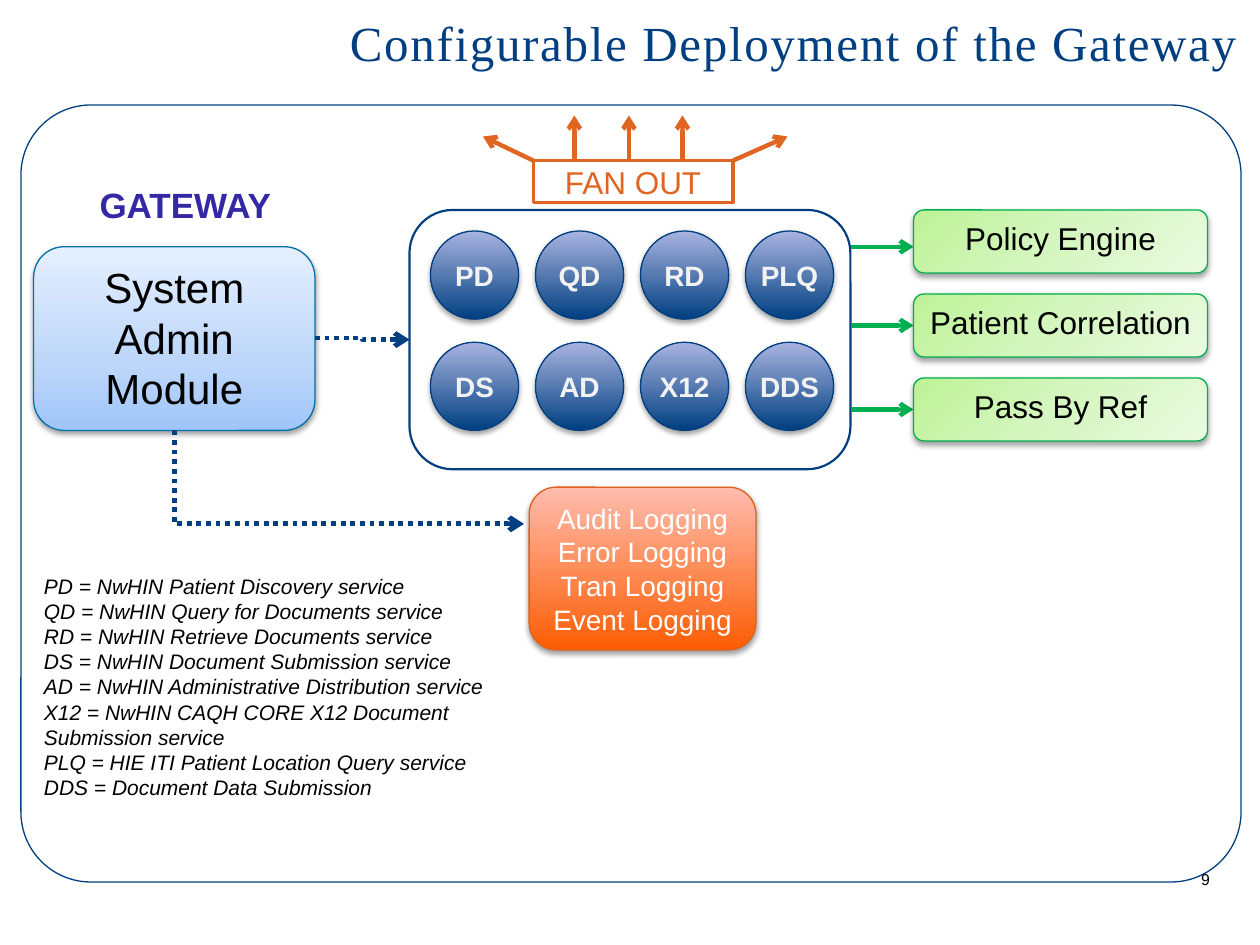
from pptx import Presentation
from pptx.dml.color import RGBColor
from pptx.enum.dml import MSO_LINE
from pptx.enum.shapes import MSO_CONNECTOR, MSO_SHAPE
from pptx.enum.text import MSO_ANCHOR, PP_ALIGN
from pptx.oxml import parse_xml
from pptx.oxml.ns import nsdecls, qn
from pptx.util import Inches, Pt

ROUND, OVAL, RECT = MSO_SHAPE.ROUNDED_RECTANGLE, MSO_SHAPE.OVAL, MSO_SHAPE.RECTANGLE
STRAIGHT, ELBOW = MSO_CONNECTOR.STRAIGHT, MSO_CONNECTOR.ELBOW
TOP, MIDDLE = MSO_ANCHOR.TOP, MSO_ANCHOR.MIDDLE
LEFT, CENTER, RIGHT = PP_ALIGN.LEFT, PP_ALIGN.CENTER, PP_ALIGN.RIGHT
DOTTED = MSO_LINE.ROUND_DOT

THEME = {
    "color": {"navy": "013F80", "green": "00B050", "orange": "DF6521", "rust": "DF611C",
              "teal": "0071A8", "violet": "3428A4", "black": "000000",
              "white": "FFFFFF", "pale": "F2F2F2"},
    "grad": {"service": (270, [(0, "003F81"), (100, "A9B4E0")]),
             "logging": (270, [(0, "FC5D04"), (100, "FFBCAE")]),
             "policy": (45, [(0, "BEF297"), (50, "D5F6C0"), (100, "EAFAE0")]),
             "admin": (270, [(0, "9FC5F9"), (35, "BCD6F9"), (100, "E5EFFE")])},
    "font": {"title": {"name": "Times New Roman", "size": Pt(28)},
             "admin": {"name": "Arial", "size": Pt(24)},
             "heading": {"name": "Arial", "size": Pt(20), "bold": True},
             "label": {"name": "Arial", "size": Pt(18)},
             "service": {"name": "Arial", "size": Pt(16), "bold": True},
             "logging": {"name": "Arial", "size": Pt(16)},
             "legend": {"name": "Arial", "size": Pt(12), "italic": True},
             "number": {"name": "Arial", "size": Pt(9)}},
}
COLOR = {k: RGBColor.from_string(v) for k, v in THEME["color"].items()}

COLS, ROWS = 120, 90
prs = Presentation()
prs.slide_width, prs.slide_height = Inches(10), Inches(7.5)
s = prs.slides.add_slide(prs.slide_layouts[6])
CELL = prs.slide_width / COLS


def put(kind, box, text="", font="label", color="black", line=None, width=0.75,
        grad=None, align=CENTER, frame=None):
    x, y, w, h = [round(v * CELL) for v in box]
    if kind is None:
        sp = s.shapes.add_textbox(x, y, w, h)
    else:
        sp = s.shapes.add_shape(kind, x, y, w, h)
        sp.shadow.inherit = False
        sp.line.color.rgb, sp.line.width = COLOR[line], Pt(width)
        sp.fill.background()
    if grad:
        angle, stops = THEME["grad"][grad]
        gs = "".join(f'<a:gs pos="{pos * 1000}"><a:srgbClr val="{c}"/></a:gs>' for pos, c in stops)
        pr = sp._element.spPr
        pr.replace(pr.find(qn("a:noFill")), parse_xml(
            f'<a:gradFill {nsdecls("a")} rotWithShape="1"><a:gsLst>{gs}</a:gsLst>'
            f'<a:lin ang="{angle * 60000}" scaled="0"/></a:gradFill>'))
        pr.find(qn("a:effectLst")).append(parse_xml(
            f'<a:outerShdw {nsdecls("a")} blurRad="40000" dist="22000" dir="5400000" '
            'rotWithShape="0"><a:srgbClr val="000000"><a:alpha val="36000"/>'
            '</a:srgbClr></a:outerShdw>'))
    if text:
        tf = sp.text_frame
        for k, v in {"word_wrap": True, "vertical_anchor": TOP, **(frame or {})}.items():
            setattr(tf, k, v)
        for i, words in enumerate(text.split("\n")):
            p = tf.add_paragraph() if i else tf.paragraphs[0]
            p.alignment = align
            r = p.add_run()
            r.text = words
            r.font.color.rgb = COLOR[color]
            for k, v in THEME["font"][font].items():
                setattr(r.font, k, v)
    return sp


def arrow(kind, ends, color, width=2.5, dash=None):
    c = s.shapes.add_connector(kind, *[round(v * CELL) for v in ends])
    c.line.color.rgb, c.line.width = COLOR[color], Pt(width)
    if dash:
        c.line.dash_style = dash
    c.line._get_or_add_ln().append(parse_xml(f'<a:tailEnd {nsdecls("a")} type="arrow"/>'))
    c._element.spPr.append(parse_xml(f'<a:effectLst {nsdecls("a")}/>'))
    return c


title = put(None, (30.6, 0, 90, 8), "Configurable Deployment of the Gateway", "title", "navy",
            frame={"vertical_anchor": MIDDLE})
title.text_frame.paragraphs[0].runs[0].font._element.set("spc", "100")

outer = put(ROUND, (2, 10, 116.2, 74), line="navy")
outer.adjustments[0] = 0.09
put(ROUND, (39, 20, 42, 24.7), line="navy", width=1.25)

snug = {"vertical_anchor": MIDDLE, "margin_left": 0, "margin_right": 0,
        "margin_top": 0, "margin_bottom": 0}
for row, names in enumerate([["PD", "QD", "RD", "PLQ"], ["DS", "AD", "X12", "DDS"]]):
    for col, name in enumerate(names):
        put(OVAL, (41 + 10 * col, 22 + 10.6 * row, 8.4, 8.4), name, "service", "pale",
            line="navy", grad="service", frame=snug)

put(ROUND, (50.4, 46.4, 21.6, 15.5),
    "Audit Logging\nError Logging\nTran Logging\nEvent Logging",
    "logging", "white", line="rust", grad="logging")

for i, (name, y) in enumerate([("Policy Engine", 23.5), ("Patient Correlation", 31),
                               ("Pass By Ref", 39)]):
    arrow(STRAIGHT, (81, y, 87, y), "green")
    put(ROUND, (87, 20 + 8 * i, 28, 6), name, line="green", grad="policy")

fan = put(RECT, (50.8, 15.3, 19, 4), "FAN OUT", color="orange", line="orange", width=2,
          frame={"vertical_anchor": MIDDLE})
fan.fill.solid()
fan.fill.fore_color.rgb = COLOR["white"]
for x, tip_x, tip_y in [(50.8, 46, 13), (54.7, 54.7, 11), (59.9, 59.9, 11),
                        (65, 65, 11), (69.8, 75, 13)]:
    arrow(STRAIGHT, (x, 15.3, tip_x, tip_y), "orange")

put(None, (8.3, 16.9, 19, 5.3), "GATEWAY", "heading", "violet", align=LEFT,
    frame={"word_wrap": False})
put(ROUND, (3.2, 23.5, 26.8, 17.5), "System Admin\nModule", "admin", line="teal", grad="admin")
arrow(ELBOW, (30, 32.2, 39, 32.35), "navy", 2.75, DOTTED)

down = arrow(ELBOW, (28.8, 28.8, 37.7, 62.1), "navy", 2.75, DOTTED)
down._element.spPr.find(qn("a:prstGeom")).set("prst", "bentConnector2")
for k, v in {"rot": "16200000", "flipH": "1"}.items():
    down._element.spPr.find(qn("a:xfrm")).set(k, v)

put(None, (3, 54, 48.4, 23),
    "PD = NwHIN Patient Discovery service\n"
    "QD = NwHIN Query for Documents service\n"
    "RD = NwHIN Retrieve Documents service\n"
    "DS = NwHIN Document Submission service\n"
    "AD = NwHIN Administrative Distribution service\n"
    "X12 = NwHIN CAQH CORE X12 Document Submission service\n"
    "PLQ = HIE ITI Patient Location Query service\n"
    "DDS = Document Data Submission", "legend", align=LEFT)
put(None, (91.4, 82.2, 25, 6), "9", "number", align=RIGHT)

prs.save("out.pptx")
